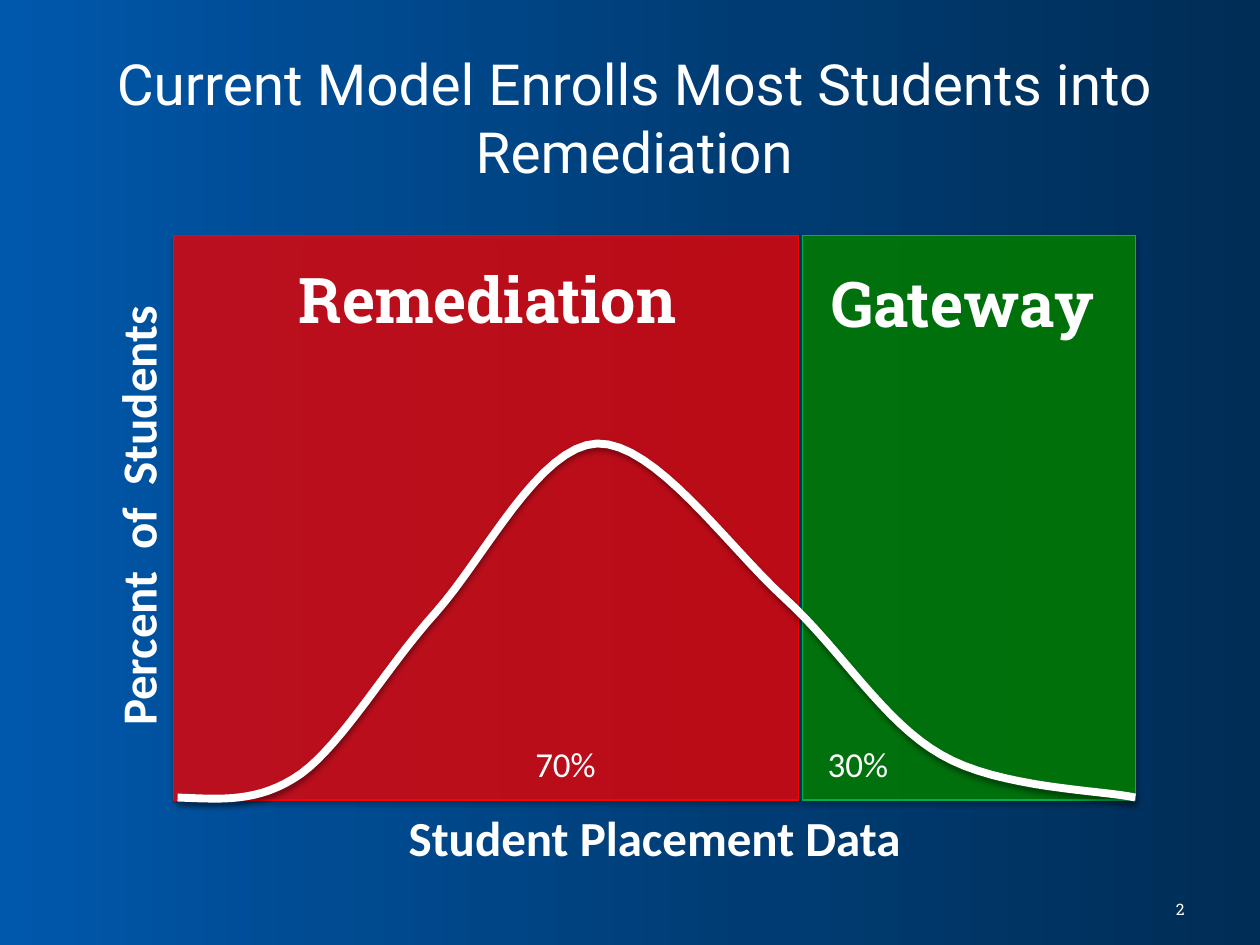
from lxml.etree import SubElement
from pptx import Presentation
from pptx.dml.color import RGBColor
from pptx.enum.shapes import MSO_SHAPE
from pptx.enum.text import MSO_ANCHOR, PP_ALIGN
from pptx.oxml.ns import qn
from pptx.util import Inches, Pt

COLS, ROWS = 100, 75
UNIT = Inches(0.1)
WHITE = "FFFFFF"
STOPS = [(0, "0058AC"), (26, "004B92"), (60, "003C73"), (100, "002D56")]
START = (0.3, 44.6)
CURVE = [
    [(3.6, 44.7), (6.7, 45.1), (10.1, 42.7)],
    [(13.5, 40.2), (16.9, 34.2), (20.8, 29.9)],
    [(24.7, 25.5), (29, 16.7), (33.6, 16.5)],
    [(38.2, 16.4), (43.9, 24.6), (48.4, 28.7)],
    [(53, 32.9), (56.3, 38.6), (60.9, 41.2)],
    [(65.5, 43.9), (73.7, 44), (76.3, 44.6)],
]
STEPS = 16


def color(code):
    return RGBColor.from_string(code)


def grid(*sizes):
    return [round(size * UNIT) for size in sizes]


def inner(box, left, top, width, height):
    return box[0] + left, box[1] + top, width, height


def tint(node, code, alpha):
    rgb = SubElement(node, qn("a:srgbClr"), val=code)
    SubElement(rgb, qn("a:alpha"), val=str(alpha * 1000))


def shade(shape, alpha):
    shape.shadow.inherit = False
    effects = shape._element.spPr.find(qn("a:effectLst"))
    outer = SubElement(effects, qn("a:outerShdw"), blurRad=str(Pt(3.1)),
                       dist=str(Pt(1.8)), dir="5400000", rotWithShape="0")
    tint(outer, "000000", alpha)


def label(slide, box, text, size, font, bold=False,
          align=PP_ALIGN.CENTER, anchor=MSO_ANCHOR.TOP):
    shape = slide.shapes.add_textbox(*grid(*box))
    frame = shape.text_frame
    frame.word_wrap = True
    frame.vertical_anchor = anchor
    frame.text = text
    para = frame.paragraphs[0]
    para.alignment = align
    face = para.runs[0].font
    face.name, face.size, face.bold = font, Pt(size), bold
    face.color.rgb = color(WHITE)
    return shape


def back(slide, box):
    slide.background.fill.solid()
    slide.background.fill.fore_color.rgb = color("005AAC")
    shape = slide.shapes.add_shape(MSO_SHAPE.RECTANGLE, *grid(*box))
    shape.line.fill.background()
    shape.fill.gradient()
    shape.fill.gradient_angle = 0
    stops = shape._element.spPr.find(qn("a:gradFill")).find(qn("a:gsLst"))
    for stop in list(stops):
        stops.remove(stop)
    for place, code in STOPS:
        stop = SubElement(stops, qn("a:gs"), pos=str(place * 1000))
        SubElement(stop, qn("a:srgbClr"), val=code)
    shade(shape, 35)


def panel(slide, box, fill, alpha, edge):
    shape = slide.shapes.add_shape(MSO_SHAPE.RECTANGLE, *grid(*box))
    shape.fill.solid()
    shape.fill.fore_color.rgb = color(fill)
    solid = shape._element.spPr.find(qn("a:solidFill"))
    solid.remove(solid[0])
    tint(solid, fill, alpha)
    shape.line.color.rgb = color(edge)
    shape.line.width = Pt(0.75)
    shade(shape, 35)


def bend(knots, t):
    s = 1 - t
    shares = s ** 3, 3 * s * s * t, 3 * s * t * t, t ** 3
    return tuple(sum(share * knot[axis] for share, knot in zip(shares, knots))
                 for axis in (0, 1))


def curve(slide, box):
    def spot(point):
        return tuple(grid(box[0] + point[0], box[1] + point[1]))

    points, last = [], START
    for part in CURVE:
        knots = [last, *part]
        points += [spot(bend(knots, i / STEPS)) for i in range(1, STEPS + 1)]
        last = part[-1]
    path = slide.shapes.build_freeform(*spot(START))
    path.add_line_segments(points, close=False)
    shape = path.convert_to_shape()
    shape.fill.background()
    shape.line.color.rgb = color(WHITE)
    shape.line.width = Pt(4.5)
    shade(shape, 38)


def plot(slide, box):
    panel(slide, inner(box, 49.9, 0, 26.4, box[3]), "008000", 83, "00B050")
    panel(slide, inner(box, 0, 0, 49.6, box[3]), "FF0000", 73, "FF0000")
    side = label(slide, inner(box, -23.6, 19.4, 41.4, 5.7),
                 "Percent  of  Students", 28, "Calibri", True)
    side.rotation = 270
    label(slide, inner(box, 0.9, 44.9, 74.5, 5.7),
          "Student Placement Data", 28, "Calibri", True)
    curve(slide, box)
    for left, text in ((50.9, "30%"), (27.7, "70%")):
        label(slide, inner(box, left, 39.7, 11, 4.4), text, 20, "Calibri",
              align=PP_ALIGN.LEFT)
    for left, top, width, text in ((49.9, 1.8, 25.5, "Gateway"),
                                   (3.5, 1.5, 42.8, "Remediation")):
        label(slide, inner(box, left, top, width, 7.1), text, 36,
              "Roboto Slab", True)


def head(slide, box):
    label(slide, box, "Current Model Enrolls Most Students into Remediation",
          32.4, "Roboto", anchor=MSO_ANCHOR.MIDDLE)


def foot(slide, box):
    label(slide, box, "2", 9, "Roboto Slab", align=PP_ALIGN.RIGHT,
          anchor=MSO_ANCHOR.MIDDLE)


def main():
    deck = Presentation()
    deck.slide_width, deck.slide_height = grid(COLS, ROWS)
    slide = deck.slides.add_slide(deck.slide_layouts[6])
    back(slide, (0, 0, COLS, ROWS))
    head(slide, (5, 3, 90.7, 12.5))
    foot(slide, (71.7, 70.9, 23.3, 2.6))
    plot(slide, (13.8, 18.7, 76.3, 44.8))
    deck.save("out.pptx")


if __name__ == "__main__":
    main()
